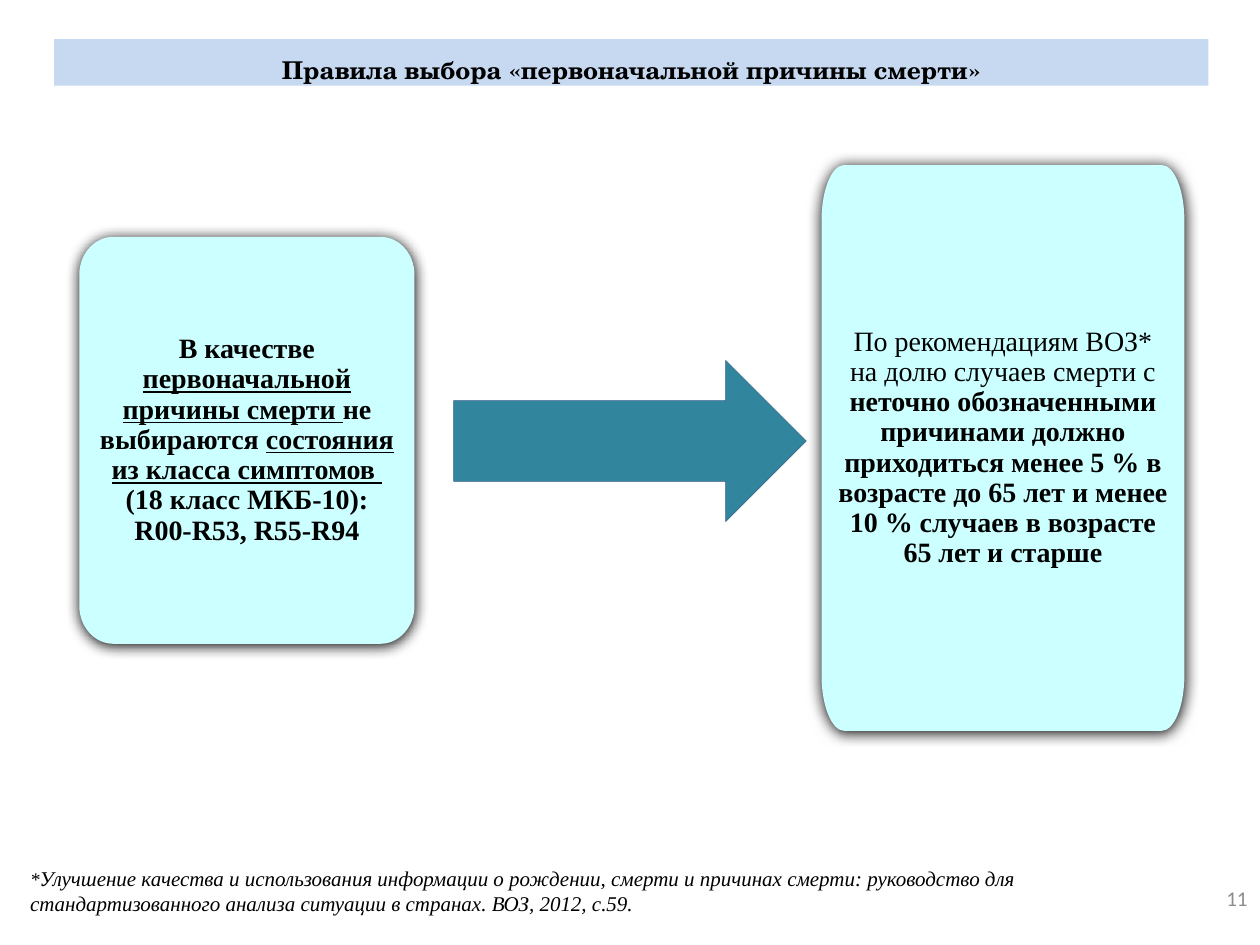
from lxml import etree
from pptx import Presentation
from pptx.dml.color import RGBColor
from pptx.enum.shapes import MSO_SHAPE
from pptx.enum.text import MSO_ANCHOR, MSO_AUTO_SIZE, PP_ALIGN
from pptx.oxml.ns import qn
from pptx.util import Inches, Pt

CENTER, RIGHT = PP_ALIGN.CENTER, PP_ALIGN.RIGHT
MIDDLE = MSO_ANCHOR.MIDDLE
NO_AUTOFIT = MSO_AUTO_SIZE.NONE
RIGHT_ARROW = MSO_SHAPE.RIGHT_ARROW
TITLE_ONLY = 5
ARC = 0.55  # Bezier handle length of a quarter ellipse
SERIF = "Times New Roman"
COLORS = {
    "text": "000000",
    "banner": "C6D9F1",
    "card": "CCFFFF",
    "arrow": "31859C",
    "arrow line": "3A5F8C",
    "number": "8C8C8C",
}


def color(name):
    return RGBColor.from_string(COLORS[name])


def add_card(page, left, top, width, height, radius_x, radius_y):
    """Draw a shadowed card whose corners are quarter ellipses."""
    left, top, width, height, radius_x, radius_y = map(
        Inches, (left, top, width, height, radius_x, radius_y))
    right, bottom = left + width, top + height
    # Each corner: where its curve starts, the corner itself, where it ends
    corners = [
        ((left, top + radius_y), (left, top), (left + radius_x, top)),
        ((right - radius_x, top), (right, top), (right, top + radius_y)),
        ((right, bottom - radius_y), (right, bottom), (right - radius_x, bottom)),
        ((left + radius_x, bottom), (left, bottom), (left, bottom - radius_y)),
    ]
    points = [point for start, _, end in corners for point in (start, end)]
    builder = page.shapes.build_freeform(*points[0])
    builder.add_line_segments(points[1:], close=True)
    card = builder.convert_to_shape()

    # Bend the segment that cuts each corner
    cuts = list(card._element.spPr.iter(qn("a:lnTo")))[::2]
    for cut, (start, corner, end) in zip(cuts, corners):
        curve = etree.Element(qn("a:cubicBezTo"))
        handles = [
            [round(p + ARC * (c - p)) for p, c in zip(point, corner)]
            for point in (start, end)
        ]
        for x, y in (*handles, end):
            etree.SubElement(curve, qn("a:pt"), x=str(x - left), y=str(y - top))
        cut.getparent().replace(cut, curve)

    card.fill.solid()
    card.fill.fore_color.rgb = color("card")
    card.line.fill.background()
    card.shadow.inherit = False
    effects = card._element.spPr.find(qn("a:effectLst"))
    shadow = etree.SubElement(
        effects, qn("a:outerShdw"), blurRad=str(Pt(8.5)), dist=str(Pt(1)),
        dir="5400000", algn="ctr", rotWithShape="0")
    etree.SubElement(shadow, qn("a:srgbClr"), val=COLORS["text"])
    return card


deck = Presentation()
deck.slide_width, deck.slide_height = Inches(10), Inches(7.5)
page = deck.slides.add_slide(deck.slide_layouts[TITLE_ONLY])

# Cards: outline, text inset, and spans as (text, bold, underline)
cards = [
    ((0.63, 1.88, 2.66, 3.23, 0.27, 0.3), 0.13, [
        ("В качестве ", True, False),
        ("первоначальной причины смерти ", True, True),
        ("не выбираются ", True, False),
        ("состояния из класса симптомов  ", True, True),
        ("(18 класс МКБ-10): R00-R53, R55-R94", True, False),
    ]),
    ((6.52, 1.31, 2.88, 4.49, 0.18, 0.44), 0.12, [
        ("По рекомендациям ВОЗ* на долю случаев смерти с ", False, False),
        ("неточно обозначенными причинами должно приходиться менее 5 % "
         "в возрасте до 65 лет и менее 10 % случаев в возрасте "
         "65 лет и старше", True, False),
    ]),
]
for outline, inset, spans in cards:
    frame = add_card(page, *outline).text_frame
    frame.word_wrap = True
    frame.vertical_anchor = MIDDLE
    frame.margin_left = frame.margin_right = Inches(inset)
    frame.margin_top = frame.margin_bottom = Inches(inset)
    para = frame.paragraphs[0]
    para.alignment = CENTER
    para.line_spacing = 0.9
    para.font.name, para.font.size = SERIF, Pt(16)
    para.font.color.rgb = color("text")
    for text, bold, underline in spans:
        span = para.add_run()
        span.text = text
        span.font.bold, span.font.underline = bold, underline

# Arrow between the cards
arrow = page.shapes.add_shape(
    RIGHT_ARROW, Inches(3.6), Inches(2.86), Inches(2.8), Inches(1.28))
arrow.shadow.inherit = False
arrow.fill.solid()
arrow.fill.fore_color.rgb = color("arrow")
arrow.line.color.rgb = color("arrow line")
arrow.line.width = Pt(0.25)

# Footnote
footnote = page.shapes.add_textbox(
    Inches(0.14), Inches(6.82), Inches(9.29), Inches(0.51))
footnote.text_frame.word_wrap = True
para = footnote.text_frame.paragraphs[0]
para.font.name, para.font.italic = SERIF, True
para.font.color.rgb = color("text")
for text, size in [
    ("*", 11),
    ("Улучшение качества и использования информации о рождении, смерти и "
     "причинах смерти: руководство для стандартизованного анализа ситуации "
     "в странах. ВОЗ, 2012, с.59.", 12),
]:
    span = para.add_run()
    span.text = text
    span.font.size = Pt(size)

# Title banner
title = page.shapes.title
title.left, title.top = Inches(0.43), Inches(0.31)
title.width, title.height = Inches(9.16), Inches(0.37)
title.fill.solid()
title.fill.fore_color.rgb = color("banner")
title.text_frame.text = "Правила выбора «первоначальной причины смерти»"
title.text_frame.auto_size = NO_AUTOFIT
title.text_frame.vertical_anchor = MIDDLE
para = title.text_frame.paragraphs[0]
para.alignment = CENTER
para.line_spacing = 1.5
para.font.name, para.font.size, para.font.bold = "TeX Gyre Schola", Pt(14), True
para.font.color.rgb = color("text")

# Page number
number = page.shapes.add_textbox(
    Inches(7.67), Inches(6.93), Inches(2.33), Inches(0.4))
number.text_frame.word_wrap = True
number.text_frame.vertical_anchor = MIDDLE
para = number.text_frame.paragraphs[0]
para.text = "11"
para.alignment = RIGHT
para.font.name, para.font.size = "Calibri", Pt(12)
para.font.color.rgb = color("number")

deck.save("out.pptx")
